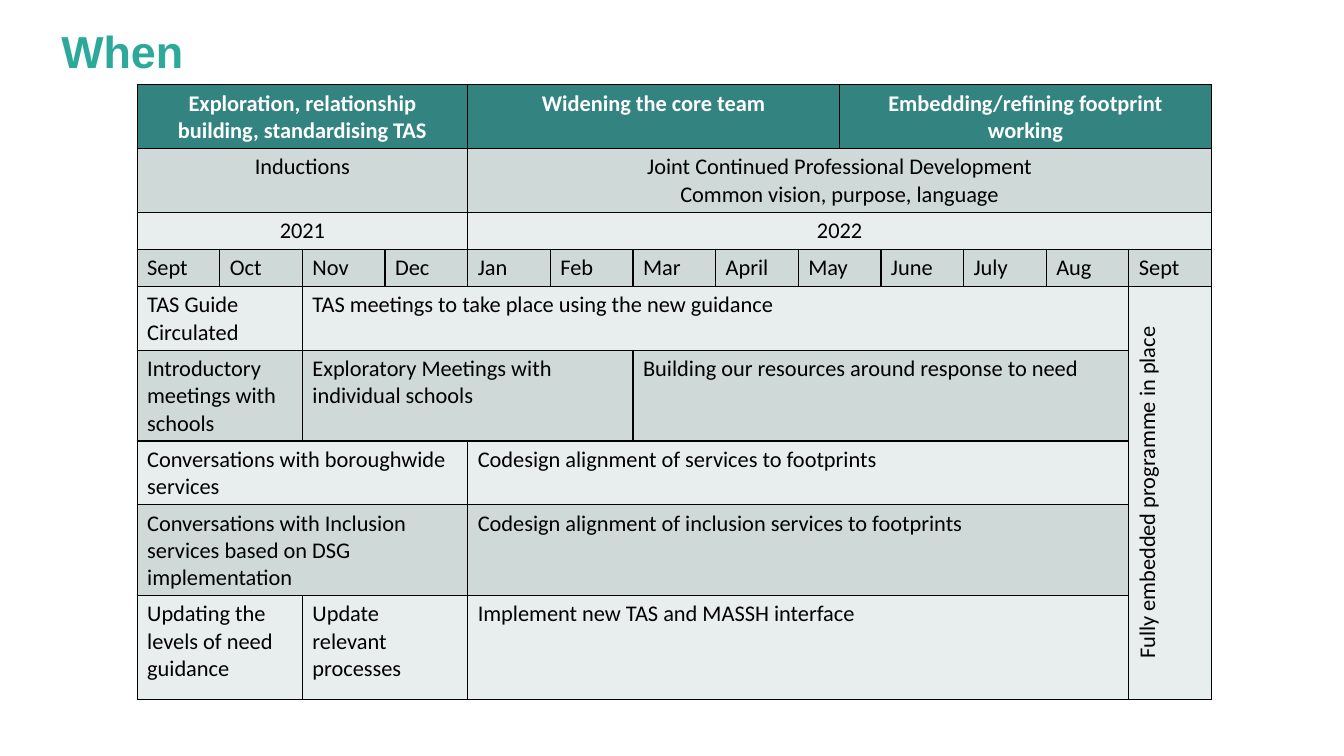
from lxml import etree
from pptx import Presentation
from pptx import util as u
from pptx.dml import color
from pptx.enum import text
from pptx.oxml import ns

TEAL, DARK, LIGHT = "338381", "CED9D8", "E8EDED"
BLACK, WHITE = "000000", "FFFFFF"
LEFT, CENTER = text.PP_ALIGN.LEFT, text.PP_ALIGN.CENTER

COLUMN_WIDTHS = [0.82] * 8 + [0.41] * 2 + [0.82] * 4
# Each row: height, fill, alignment, cells as (wording, columns spanned)
TIMELINE = [
    (0.61, TEAL, CENTER, [("Exploration, relationship building, standardising TAS", 4),
                          ("Widening the core team", 5),
                          ("Embedding/refining footprint working", 5)]),
    (0.61, DARK, CENTER, [("Inductions", 4),
                          ("Joint Continued Professional Development\n"
                           "Common vision, purpose, language", 10)]),
    (0.35, LIGHT, CENTER, [("2021", 4), ("2022", 10)]),
    (0.35, DARK, LEFT, [(month, 2 if month == "May" else 1) for month in
                        "Sept Oct Nov Dec Jan Feb Mar April May June July Aug Sept".split()]),
    (0.61, LIGHT, LEFT, [("TAS Guide Circulated", 2),
                         ("TAS meetings to take place using the new guidance", 11)]),
    (0.87, DARK, LEFT, [("Introductory meetings with schools", 2),
                        ("Exploratory Meetings with individual schools", 4),
                        ("Building our resources around response to need", 7)]),
    (0.61, LIGHT, LEFT, [("Conversations with boroughwide services", 4),
                         ("Codesign alignment of services to footprints", 9)]),
    (0.87, DARK, LEFT, [("Conversations with Inclusion services based on DSG implementation", 4),
                        ("Codesign alignment of inclusion services to footprints", 9)]),
    (1.03, LIGHT, LEFT, [("Updating the levels of need guidance", 2),
                         ("Update relevant processes", 2),
                         ("Implement new TAS and MASSH interface", 9)]),
]
FIRST_ACTIVITY_ROW = 4


def rgb(value):
    return color.RGBColor.from_string(value)


def set_all(target, values):
    for name, value in values.items():
        setattr(target, name, value)


def format_font(font, size, name, ink, bold):
    set_all(font, {"size": u.Pt(size), "name": name, "bold": bold})
    font.color.rgb = rgb(ink)


def add_borders(cell):
    properties = cell._tc.get_or_add_tcPr()
    for side in ("lnL", "lnR", "lnT", "lnB"):
        line = etree.SubElement(properties, ns.qn("a:" + side), w=str(u.Pt(1)))
        fill = etree.SubElement(line, ns.qn("a:solidFill"))
        etree.SubElement(fill, ns.qn("a:srgbClr"), val=BLACK)


def write_cell(cell, wording, alignment, ink=BLACK, bold=False):
    cell.text = wording
    for paragraph in cell.text_frame.paragraphs:
        paragraph.alignment = alignment
        format_font(paragraph.font, 16, "Calibri", ink, bold)


def add_title(slide, wording):
    title = slide.shapes.add_textbox(u.Inches(0.51), u.Inches(-0.19),
                                     u.Inches(12.49), u.Inches(1.45))
    frame = title.text_frame
    set_all(frame, {"word_wrap": True, "vertical_anchor": text.MSO_ANCHOR.MIDDLE,
                    "text": wording})
    paragraph = frame.paragraphs[0]
    paragraph.line_spacing = 0.9
    format_font(paragraph.font, 32, "Arial", "2CA99B", True)


def add_timeline(slide):
    table = slide.shapes.add_table(len(TIMELINE), len(COLUMN_WIDTHS), u.Inches(1.36),
                                   u.Inches(0.84), u.Inches(10.62), u.Inches(6.1)).table
    set_all(table, {"first_row": False, "horz_banding": False})
    for column, width in zip(table.columns, COLUMN_WIDTHS):
        column.width = u.Inches(width)
    for row, (height, fill, alignment, entries) in enumerate(TIMELINE):
        table.rows[row].height = u.Inches(height)
        for cell in table.rows[row].cells:
            add_borders(cell)
            cell.fill.solid()
            cell.fill.fore_color.rgb = rgb(LIGHT if row >= FIRST_ACTIVITY_ROW
                                           and cell is None else fill)
        start = 0
        for wording, span in entries:
            cell = table.cell(row, start)
            if span > 1:
                cell.merge(table.cell(row, start + span - 1))
            write_cell(cell, wording, alignment,
                       WHITE if fill == TEAL else BLACK, fill == TEAL)
            start += span
    return table


def add_outcome(table, wording):
    """Fill the last column beside the activities with upward-reading text."""
    last = len(COLUMN_WIDTHS) - 1
    outcome = table.cell(FIRST_ACTIVITY_ROW, last)
    outcome.merge(table.cell(len(TIMELINE) - 1, last))
    write_cell(outcome, wording, CENTER)
    outcome._tc.get_or_add_tcPr().set("vert", "vert270")


def main():
    deck = Presentation()
    set_all(deck, {"slide_width": u.Inches(13.33), "slide_height": u.Inches(7.5)})
    slide = deck.slides.add_slide(deck.slide_layouts[6])
    add_title(slide, "When")
    add_outcome(add_timeline(slide), "Fully embedded programme in place")
    deck.save("out.pptx")


if __name__ == "__main__":
    main()
